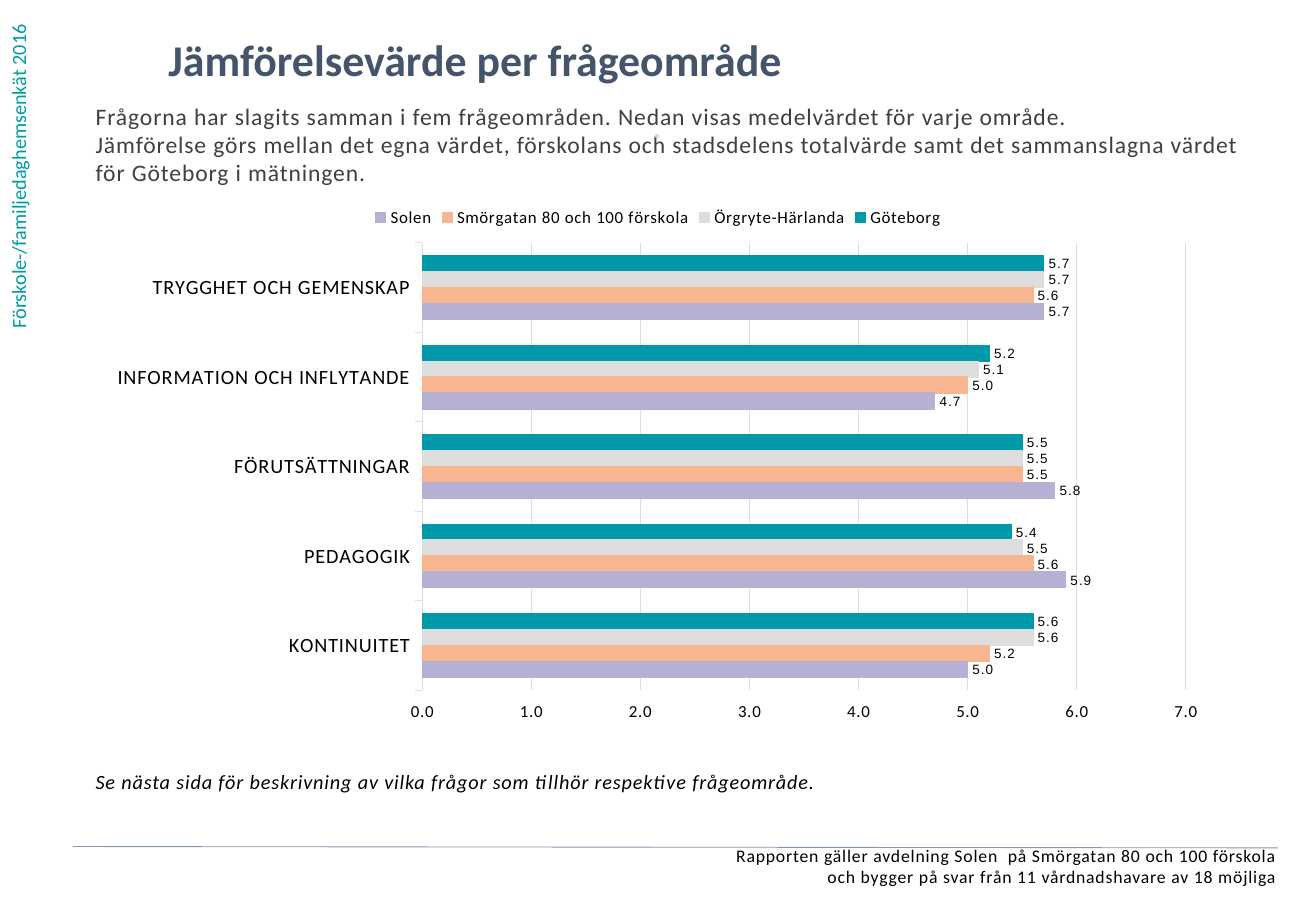
from dataclasses import dataclass
from typing import Any

import lxml.etree
import pptx
import pptx.chart.data
import pptx.dml.color
import pptx.enum.chart
import pptx.enum.shapes
import pptx.enum.text
import pptx.oxml
import pptx.oxml.ns
import pptx.util

Pt = pptx.util.Pt
qn = pptx.oxml.ns.qn
Align = pptx.enum.text.PP_ALIGN

FACE = "Calibri"
BLACK = "000000"
GREY = "DDDDDD"
FORM = "0.0;0.0"
AREAS = ["TRYGGHET OCH GEMENSKAP", "INFORMATION OCH INFLYTANDE",
         "FÖRUTSÄTTNINGAR", "PEDAGOGIK", "KONTINUITET"]
PLOT = {"x": 0.29, "y": 0.09, "w": 0.68, "h": 0.83}


@dataclass
class Series:
    name: str
    values: list[float]
    tint: str


@dataclass
class Note:
    lines: list[str]
    box: tuple[float, float, float, float]
    style: dict[str, Any]


UNITS = [
    Series("Göteborg", [5.7, 5.2, 5.5, 5.4, 5.6], "0099AA"),
    Series("Örgryte-Härlanda", [5.7, 5.1, 5.5, 5.5, 5.6], GREY),
    Series("Smörgatan 80 och 100 förskola", [5.6, 5.0, 5.5, 5.6, 5.2], "F9B590"),
    Series("Solen", [5.7, 4.7, 5.8, 5.9, 5.0], "B6B1D4"),
]

NOTES = [
    Note(["Förskole-/familjedaghemsenkät 2016"], (0, 0, 25.6, 201.8),
         dict(size=12, tint="009BA4", turn="vert270", pad=(7.2, 3.6))),
    Note(["⋅"], (278.6, 73.4, 221.8, 28),
         dict(size=12, tint="D2D9E2", bold=True, track=0.5, align=Align.CENTER)),
    Note(["Se nästa sida för beskrivning av vilka frågor som tillhör "
          "respektive frågeområde."], (56.6, 456, 666, 20),
         dict(size=12, italic=True, track=0.5)),
    Note(["Rapporten gäller avdelning Solen  på Smörgatan 80 och 100 förskola",
          "och bygger på svar från 11 vårdnadshavare av 18 möjliga"],
         (8, 500.5, 748.8, 31),
         dict(size=10.5, track=0.5, align=Align.RIGHT)),
]

INTRO = [
    "Frågorna har slagits samman i fem frågeområden. Nedan visas medelvärdet "
    "för varje område.",
    "Jämförelse görs mellan det egna värdet, förskolans och stadsdelens "
    "totalvärde samt det sammanslagna värdet för Göteborg i mätningen.",
]


def hue(target: Any, code: str) -> None:
    target.rgb = pptx.dml.color.RGBColor.from_string(code)


def paint(fill: Any, code: str) -> None:
    fill.solid()
    hue(fill.fore_color, code)


def place(shape: Any, box: tuple[float, float, float, float]) -> None:
    shape.left, shape.top, shape.width, shape.height = map(Pt, box)


def write(shape: Any, lines: list[str], *, size: float, tint: str = BLACK,
          bold: bool = False, italic: bool = False, track: float = 0,
          align: Any = Align.LEFT, turn: str = "horz",
          pad: tuple[float, float] = (0, 0)) -> None:
    frame = shape.text_frame
    frame.word_wrap = True
    frame.auto_size = pptx.enum.text.MSO_AUTO_SIZE.NONE
    frame.vertical_anchor = pptx.enum.text.MSO_ANCHOR.TOP
    frame.margin_left = frame.margin_right = Pt(pad[0])
    frame.margin_top = frame.margin_bottom = Pt(pad[1])
    frame._txBody.bodyPr.set("vert", turn)
    for index, line in enumerate(lines):
        para = frame.add_paragraph() if index else frame.paragraphs[0]
        props = para._p.get_or_add_pPr()
        props.set("marL", "0")
        props.set("indent", "0")
        lxml.etree.SubElement(props, qn("a:buNone"))
        para.space_before = Pt(0)
        para.alignment = align
        run = para.add_run()
        run.text = line
        font = run.font
        font.name, font.size = FACE, Pt(size)
        font.bold, font.italic = bold, italic
        hue(font.color, tint)
        run._r.get_or_add_rPr().set("spc", str(int(track * 100)))


def set_font(font: Any, size: float, face: str = FACE) -> None:
    font.name, font.size = face, Pt(size)
    hue(font.color, BLACK)


def set_plot(chart: Any) -> None:
    area = chart._chartSpace.chart.plotArea
    for old in area.findall(qn("c:layout")):
        area.remove(old)
    layout = lxml.etree.Element(qn("c:layout"))
    area.insert(0, layout)
    manual = lxml.etree.SubElement(layout, qn("c:manualLayout"))
    parts = {"layoutTarget": "inner", "xMode": "edge", "yMode": "edge", **PLOT}
    for tag, value in parts.items():
        lxml.etree.SubElement(manual, qn(f"c:{tag}")).set("val", str(value))


def add_bars(slide: Any) -> None:
    kinds = pptx.enum.chart
    data = pptx.chart.data.CategoryChartData(number_format=FORM)
    data.categories = AREAS
    for unit in UNITS:
        data.add_series(unit.name, unit.values)
    box = map(Pt, (57.2, 115.2, 665.6, 319.6))
    chart = slide.shapes.add_chart(
        kinds.XL_CHART_TYPE.BAR_CLUSTERED, *box, data).chart
    chart.has_title = False
    set_font(chart.font, 10)
    chart.has_legend = True
    chart.legend.position = kinds.XL_LEGEND_POSITION.TOP
    chart.legend.include_in_layout = False
    set_font(chart.legend.font, 10)

    plot = chart.plots[0]
    plot.gap_width, plot.overlap = 162, 0
    plot.vary_by_categories = False
    for bar, unit in zip(plot.series, UNITS):
        paint(bar.format.fill, unit.tint)
        paint(bar.format.line.fill, unit.tint)
        bar.format.line.width = Pt(0.75)
        label = bar.data_labels
        label.show_value = True
        label.number_format, label.number_format_is_linked = FORM, False
        label.position = kinds.XL_LABEL_POSITION.OUTSIDE_END
        set_font(label.font, 8, "Arial")

    rows, scale = chart.category_axis, chart.value_axis
    rows.reverse_order = True
    scale.minimum_scale, scale.maximum_scale, scale.major_unit = 0, 7, 1
    scale.has_major_gridlines = True
    scale.tick_label_position = kinds.XL_TICK_LABEL_POSITION.HIGH
    scale.tick_labels.number_format = FORM
    scale.tick_labels.number_format_is_linked = False
    for axis, size in ((rows, 12), (scale, 10)):
        axis.major_tick_mark = kinds.XL_TICK_MARK.OUTSIDE
        set_font(axis.tick_labels.font, size)
    for line in (rows.format.line, scale.major_gridlines.format.line):
        paint(line.fill, GREY)
        line.width = Pt(0.75)
    scale.format.line.fill.background()
    set_plot(chart)
    for props in chart._chartSpace.iter(qn("a:defRPr")):
        props.set("spc", "50")


def add_rule(slide: Any) -> None:
    ends = map(Pt, (43.2, 501.8, 757.4, 502.6))
    rule = slide.shapes.add_connector(
        pptx.enum.shapes.MSO_CONNECTOR.STRAIGHT, *ends)
    paint(rule.line.fill, "8497B0")
    rule.line.width = Pt(0.5)
    lxml.etree.SubElement(rule._element.spPr, qn("a:effectLst"))


def main() -> None:
    deck = pptx.Presentation()
    deck.slide_width, deck.slide_height = Pt(780), Pt(540)
    slide = deck.slides.add_slide(deck.slide_layouts[1])
    title, body = slide.shapes.title, slide.placeholders[1]
    place(title, (99.8, 19.4, 600.5, 41))
    write(title, ["Jämförelsevärde per frågeområde"],
          size=26, tint="44546A", bold=True)
    place(body, (56.7, 60.2, 690, 54))
    write(body, INTRO, size=14, tint="404040", track=0.5)
    for note in NOTES:
        shape = slide.shapes.add_textbox(*map(Pt, note.box))
        write(shape, note.lines, **note.style)
    add_bars(slide)
    add_rule(slide)
    deck.save("out.pptx")


if __name__ == "__main__":
    main()
